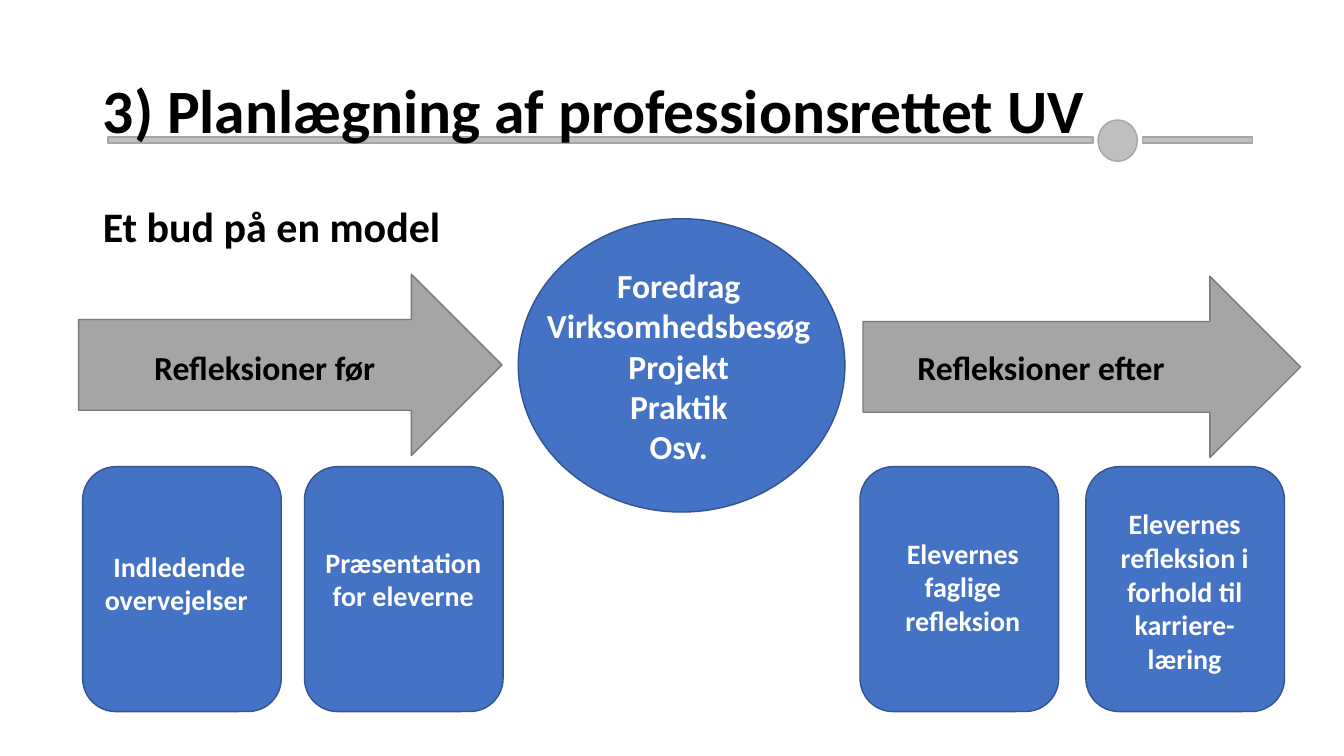
from dataclasses import dataclass

from lxml import etree
from pptx import Presentation
from pptx.dml.color import RGBColor
from pptx.enum.shapes import MSO_SHAPE
from pptx.enum.text import MSO_ANCHOR, MSO_AUTO_SIZE, PP_ALIGN
from pptx.util import Inches, Pt

RECTANGLE = MSO_SHAPE.RECTANGLE
OVAL = MSO_SHAPE.OVAL
ARROW = MSO_SHAPE.RIGHT_ARROW
ROUNDED = MSO_SHAPE.ROUNDED_RECTANGLE
LEFT, CENTER = PP_ALIGN.LEFT, PP_ALIGN.CENTER
TOP, MIDDLE = MSO_ANCHOR.TOP, MSO_ANCHOR.MIDDLE
NO_AUTOFIT = MSO_AUTO_SIZE.NONE
DRAWING_NS = "http://schemas.openxmlformats.org/drawingml/2006/main"


@dataclass(frozen=True)
class Theme:
    font: str = "Calibri"
    black: str = "000000"
    white: str = "FFFFFF"
    blue: tuple = ("4472C4", "325491")
    gray: tuple = ("A5A5A5", "7A7A7A")
    rule: tuple = ("BFBFBF", "A6A6A6")
    title_size: int = 44
    heading_size: int = 30
    label_size: int = 24
    card_size: int = 20


THEME = Theme()

TITLE = "3) Planlægning af professionsrettet UV"
HEADING = "Et bud på en model"
ACTIVITIES = ["Foredrag ", "Virksomhedsbesøg ", "Projekt ", "Praktik ", "Osv. "]

# Boxes are left, top, width, height in inches.
TITLE_BOX = (0.92, 0.4, 11.5, 1.45)
HEADING_BOX = (0.92, 2, 11.5, 4.76)
CIRCLE_BOX = (5.14, 2.17, 3.24, 2.91)
ACTIVITIES_BOX = (5.29, 2.58, 2.96, 2.12)

# Title rule: left and width of each bar, then the dot between them.
RULE_BARS = [(1.07, 9.77), (11.33, 1.09)]
RULE_TOP, RULE_HEIGHT = 1.36, 0.06
RULE_DOT = (10.89, 1.19, 0.39, 0.41)

# Arrow box, label left, label.
PHASES = [
    ((0.78, 2.72, 4.2, 1.8), 0.97, "Refleksioner før"),
    ((8.56, 2.74, 4.34, 1.8), 8.67, "Refleksioner efter"),
]
PHASE_LABEL_TOP, PHASE_LABEL_WIDTH, PHASE_LABEL_HEIGHT = 3.39, 3.31, 0.5

# Card left, text left, text top, text height, text.
CARDS = [
    (0.82, 0.9, 5.4, 1.08, "Indledende overvejelser "),
    (3.02, 3.12, 5.36, 1.08, "Præsentation for eleverne"),
    (8.53, 8.67, 5.27, 1.41, "Elevernes faglige refleksion"),
    (10.77, 10.87, 4.98, 2.09, "Elevernes refleksion i forhold til karriere-læring"),
]
CARD_TOP, CARD_WIDTH, CARD_HEIGHT = 4.63, 1.97, 2.43
CARD_TEXT_WIDTH = 1.76


def add_filled_shape(slide, kind, box, colors):
    shape = slide.shapes.add_shape(kind, *map(Inches, box))
    shape.shadow.inherit = False
    fill, line = colors
    shape.fill.solid()
    shape.fill.fore_color.rgb = RGBColor.from_string(fill)
    shape.line.color.rgb = RGBColor.from_string(line)
    shape.line.width = Pt(1)


def write_text(text_frame, text, size, color, alignment=CENTER, anchor=TOP):
    text_frame.text = text
    text_frame.word_wrap = True
    text_frame.auto_size = NO_AUTOFIT
    text_frame.vertical_anchor = anchor
    for paragraph in text_frame.paragraphs:
        paragraph.alignment = alignment
        for run in paragraph.runs:
            run.font.name = THEME.font
            run.font.size = Pt(size)
            run.font.bold = True
            run.font.color.rgb = RGBColor.from_string(color)


def add_label(slide, box, text, size, color):
    text_box = slide.shapes.add_textbox(*map(Inches, box))
    write_text(text_box.text_frame, text, size, color)


def fill_placeholder(slide, placeholder, box, text, size, anchor, space_before):
    """Format a placeholder as plain left-aligned text, in front of earlier shapes."""
    placeholder.left, placeholder.top, placeholder.width, placeholder.height = map(Inches, box)
    write_text(placeholder.text_frame, text, size, THEME.black, LEFT, anchor)
    paragraph = placeholder.text_frame.paragraphs[0]
    paragraph.line_spacing = 0.9
    paragraph.space_before = Pt(space_before)
    properties = paragraph._p.get_or_add_pPr()
    properties.set("marL", "0")
    properties.set("indent", "0")
    etree.SubElement(properties, f"{{{DRAWING_NS}}}buNone")
    slide.shapes.element.append(placeholder.element)


def main():
    presentation = Presentation()
    presentation.slide_width = Inches(13.33)
    presentation.slide_height = Inches(7.5)
    slide = presentation.slides.add_slide(presentation.slide_layouts[1])

    for left, width in RULE_BARS:
        add_filled_shape(slide, RECTANGLE, (left, RULE_TOP, width, RULE_HEIGHT), THEME.rule)
    add_filled_shape(slide, OVAL, RULE_DOT, THEME.rule)

    fill_placeholder(slide, slide.shapes.title, TITLE_BOX, TITLE,
                     THEME.title_size, MIDDLE, 0)
    fill_placeholder(slide, slide.placeholders[1], HEADING_BOX, HEADING,
                     THEME.heading_size, TOP, 10)

    add_filled_shape(slide, OVAL, CIRCLE_BOX, THEME.blue)
    add_label(slide, ACTIVITIES_BOX, "\n".join(ACTIVITIES), THEME.label_size, THEME.white)

    for arrow_box, label_left, label in PHASES:
        add_filled_shape(slide, ARROW, arrow_box, THEME.gray)
        label_box = (label_left, PHASE_LABEL_TOP, PHASE_LABEL_WIDTH, PHASE_LABEL_HEIGHT)
        add_label(slide, label_box, label, THEME.label_size, THEME.black)

    for left, text_left, text_top, text_height, text in CARDS:
        add_filled_shape(slide, ROUNDED, (left, CARD_TOP, CARD_WIDTH, CARD_HEIGHT), THEME.blue)
        text_box = (text_left, text_top, CARD_TEXT_WIDTH, text_height)
        add_label(slide, text_box, text, THEME.card_size, THEME.white)

    presentation.save("out.pptx")


if __name__ == "__main__":
    main()
